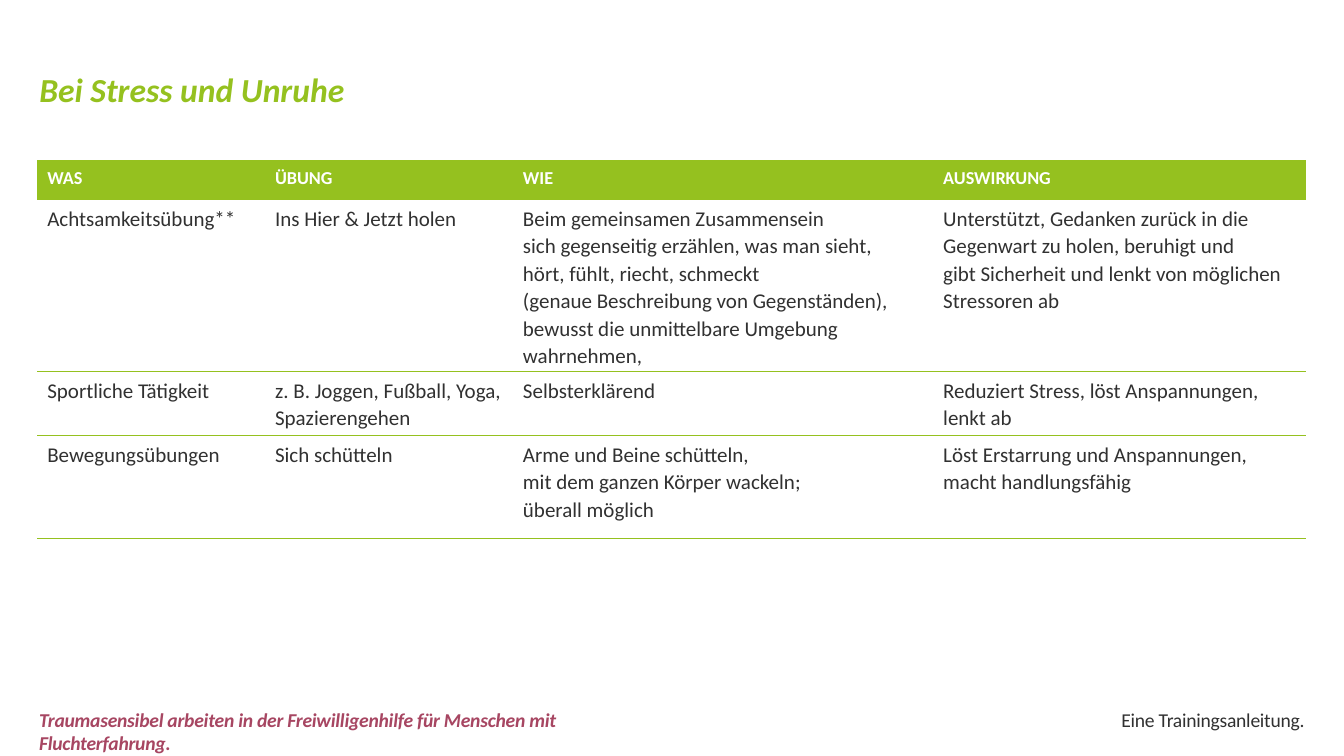
from dataclasses import dataclass

import pptx
import pptx.dml.color
import pptx.enum.text
import pptx.oxml
import pptx.oxml.ns
import pptx.util

Pt = pptx.util.Pt
ALIGN = pptx.enum.text.PP_ALIGN
ANCHOR = pptx.enum.text.MSO_ANCHOR
GREEN, DARK, WINE, WHITE = "95C11F", "313131", "A74662", "FFFFFF"


@dataclass(frozen=True)
class Style:
    size: float
    color: str
    bold: bool = False
    italic: bool = False
    spacing: int = 0


@dataclass(frozen=True)
class Footer:
    text: str
    left: float
    width: float
    align: ALIGN
    style: Style


TITLE = Style(24, GREEN, bold=True, italic=True)
HEADER = Style(13, WHITE, bold=True)
BODY = Style(15, DARK)

FOOTERS = [
    Footer("Traumasensibel arbeiten in der Freiwilligenhilfe für Menschen mit Fluchterfahrung.",
           20.9, 480.2, ALIGN.LEFT, Style(14, WINE, True, True, -20)),
    Footer("Eine Trainingsanleitung.",
           791.3, 147.6, ALIGN.RIGHT, Style(14, DARK, spacing=-20)),
]

COLUMN_WIDTHS = [162.7, 177.1, 300.2, 266.4]
ROW_HEIGHTS = [28, 105, 45.4, 73.4]
ROWS = [
    ["WAS", "ÜBUNG", "WIE", "AUSWIRKUNG"],
    ["Achtsamkeitsübung**",
     "Ins Hier & Jetzt holen",
     "Beim gemeinsamen Zusammensein \nsich gegenseitig erzählen, was man sieht, \n"
     "hört, fühlt, riecht, schmeckt \n(genaue Beschreibung von Gegenständen), "
     "bewusst die unmittelbare Umgebung wahrnehmen,",
     "Unterstützt, Gedanken zurück in die \nGegenwart zu holen, beruhigt und \n"
     "gibt Sicherheit und lenkt von möglichen Stressoren ab"],
    ["Sportliche Tätigkeit",
     "z. B. Joggen, Fußball, Yoga, Spazierengehen",
     "Selbsterklärend",
     "Reduziert Stress, löst Anspannungen, lenkt ab"],
    ["Bewegungsübungen",
     "Sich schütteln",
     "Arme und Beine schütteln, \nmit dem ganzen Körper wackeln; \nüberall möglich",
     "Löst Erstarrung und Anspannungen, \nmacht handlungsfähig"],
]


def rgb(color: str) -> pptx.dml.color.RGBColor:
    return pptx.dml.color.RGBColor.from_string(color)


def add_text(p, text: str, style: Style) -> None:
    for i, line in enumerate(text.split("\n")):
        if i:
            p.add_line_break()
        r = p.add_run()
        r.text = line
        r.font.name = "Calibri"
        r.font.size = Pt(style.size)
        r.font.bold = style.bold
        r.font.italic = style.italic
        r.font.color.rgb = rgb(style.color)
        if style.spacing:
            r.font._element.set("spc", str(style.spacing))


def set_borders(cell) -> None:
    ns = pptx.oxml.ns.nsdecls("a")
    line = f'<a:solidFill><a:srgbClr val="{GREEN}"/></a:solidFill>'
    tc_pr = cell._tc.get_or_add_tcPr()
    for i, side in enumerate("LRTB"):
        fill = line if side in "TB" else "<a:noFill/>"
        tc_pr.insert(i, pptx.oxml.parse_xml(
            f'<a:ln{side} {ns} w="{Pt(0.5)}">{fill}</a:ln{side}>'))


def add_title(s) -> None:
    sp = s.shapes.title
    sp.left, sp.top, sp.width, sp.height = Pt(20.9), Pt(45.4), Pt(916.6), Pt(33.8)
    tf = sp.text_frame
    tf.vertical_anchor = ANCHOR.MIDDLE
    p = tf.paragraphs[0]
    p.alignment = ALIGN.LEFT
    p.line_spacing = Pt(32)
    add_text(p, "Bei Stress und Unruhe", TITLE)


def add_footer(s, footer: Footer) -> None:
    sp = s.shapes.add_textbox(Pt(footer.left), Pt(501.8), Pt(footer.width), Pt(24.5))
    tf = sp.text_frame
    tf.word_wrap = False
    tf.auto_size = pptx.enum.text.MSO_AUTO_SIZE.SHAPE_TO_FIT_TEXT
    p = tf.paragraphs[0]
    p.alignment = footer.align
    add_text(p, footer.text, footer.style)


def add_exercise_table(s) -> None:
    table = s.shapes.add_table(
        len(ROWS), len(COLUMN_WIDTHS), Pt(26.6), Pt(114.5),
        Pt(sum(COLUMN_WIDTHS)), Pt(sum(ROW_HEIGHTS))).table
    table.first_row = table.horz_banding = False
    for column, width in zip(table.columns, COLUMN_WIDTHS):
        column.width = Pt(width)
    for i, (row, height, texts) in enumerate(zip(table.rows, ROW_HEIGHTS, ROWS)):
        row.height = Pt(height)
        for cell, text in zip(row.cells, texts):
            if i == 0:
                cell.fill.solid()
                cell.fill.fore_color.rgb = rgb(GREEN)
            else:
                cell.fill.background()
            set_borders(cell)
            p = cell.text_frame.paragraphs[0]
            p.line_spacing = 1.07
            add_text(p, text, BODY if i else HEADER)


def main() -> None:
    prs = pptx.Presentation()
    prs.slide_width, prs.slide_height = Pt(960), Pt(540)
    s = prs.slides.add_slide(prs.slide_layouts[5])
    for footer in FOOTERS:
        add_footer(s, footer)
    add_title(s)
    add_exercise_table(s)
    prs.save("out.pptx")


if __name__ == "__main__":
    main()
